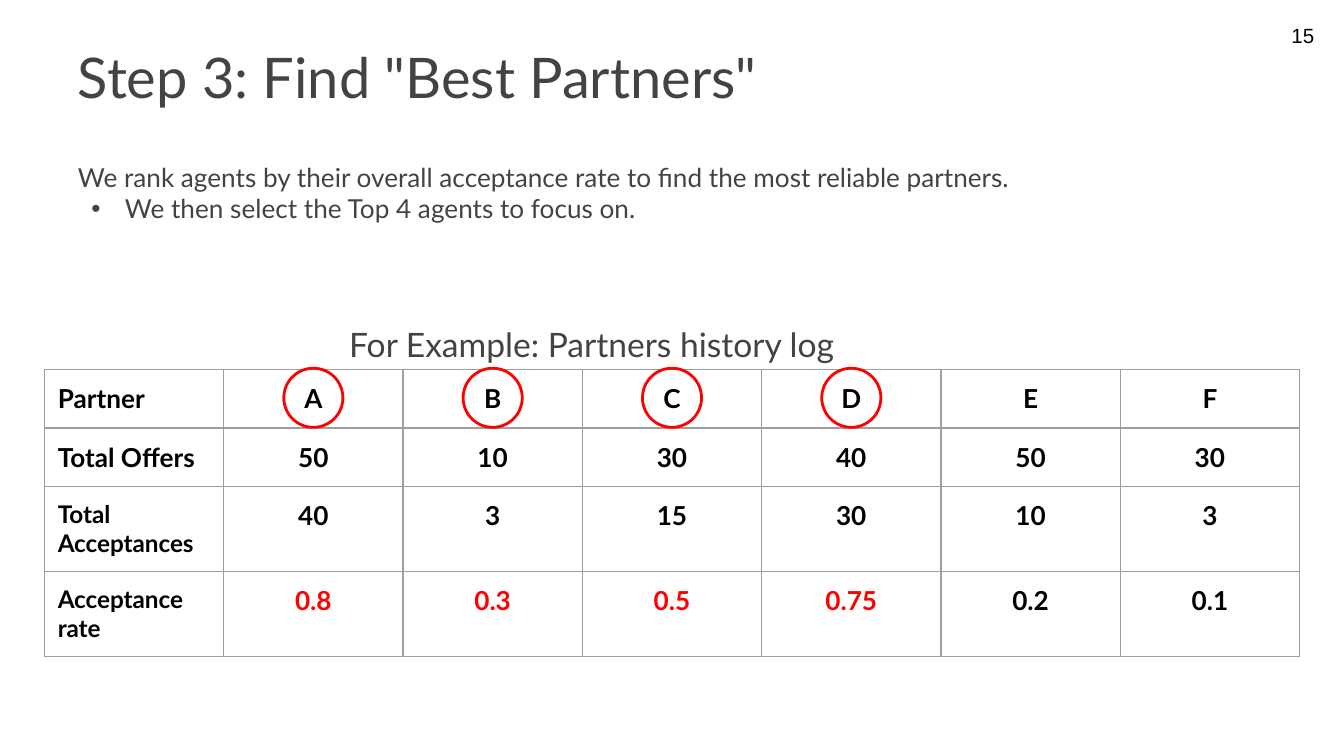
import pptx
import pptx.dml.color
import pptx.enum.shapes
import pptx.enum.text
import pptx.oxml
import pptx.oxml.ns
import pptx.util

Inches, Pt = pptx.util.Inches, pptx.util.Pt
ALIGN = pptx.enum.text.PP_ALIGN
ANCHOR = pptx.enum.text.MSO_ANCHOR

TITLE = 'Step 3: Find "Best Partners"'
INTRO = "We rank agents by their overall acceptance rate to find the most reliable partners."
SELECTION = "We then select the Top 4 agents to focus on."
PAGE = "15"
CAPTION = "For Example: Partners history log"
HISTORY = [
    ("Partner", "A", "B", "C", "D", "E", "F"),
    ("Total Offers", "50", "10", "30", "40", "50", "30"),
    ("Total Acceptances", "40", "3", "15", "30", "10", "3"),
    ("Acceptance rate", "0.8", "0.3", "0.5", "0.75", "0.2", "0.1"),
]
BEST = ("A", "B", "C", "D")

THEME = {
    "grey": "434343", "black": "000000", "red": "FF0000", "border": "9E9E9E",
    "font": "Lato", "page font": "Arial",
    "title": 30, "body": 14, "page": 11, "caption": 18, "cell": 14, "long label": 13,
}
WIDTH = Inches(10)
TABLE_LEFT, TABLE_TOP, COLUMN, ROW = 0.33, 2.75, 9.34 / 7, 0.42
RING = 0.44


def rgb(color):
    return pptx.dml.color.RGBColor.from_string(THEME[color])


def write(paragraph, text, size, color="grey", font="font", bold=False, align=ALIGN.LEFT):
    run = paragraph.add_run()
    run.text = text
    formats = {"name": THEME[font], "size": Pt(THEME[size]), "bold": bold}
    for attribute, value in formats.items():
        setattr(run.font, attribute, value)
    run.font.color.rgb = rgb(color)
    paragraph.alignment = align
    paragraph.space_before = Pt(0)


def add_xml(parent, xml):
    parent.append(pptx.oxml.parse_xml(
        xml.replace(">", f" {pptx.oxml.ns.nsdecls('a')}>", 1)))


def place(box, left, top, width, height, across, down, anchor=ANCHOR.TOP):
    """Position a text shape and set its insets; return its first paragraph."""
    bounds = {"left": left, "top": top, "width": width, "height": height}
    for attribute, value in bounds.items():
        setattr(box, attribute, Inches(value))
    frame = box.text_frame
    formats = {
        "margin_left": Inches(across), "margin_right": Inches(across),
        "margin_top": Inches(down), "margin_bottom": Inches(down),
        "word_wrap": True, "vertical_anchor": anchor,
        "auto_size": pptx.enum.text.MSO_AUTO_SIZE.NONE,
    }
    for attribute, value in formats.items():
        setattr(frame, attribute, value)
    return frame.paragraphs[0]


def add_body(body):
    intro = place(body, 0.51, 1.16, 9, 1.3, 0.07, 0.04)
    selection = body.text_frame.add_paragraph()
    bullet = (f'<a:buClr><a:srgbClr val="{THEME["grey"]}"/></a:buClr>',
              '<a:buFont typeface="Arial"></a:buFont>', '<a:buChar char="•"></a:buChar>')
    for paragraph, text, margin, indent, marks in (
            (intro, INTRO, 0, 0, ("<a:buNone></a:buNone>",)),
            (selection, SELECTION, 0.35, -0.25, bullet)):
        properties = paragraph._p.get_or_add_pPr()
        properties.set("marL", str(Inches(margin)))
        properties.set("indent", str(Inches(indent)))
        for mark in marks:
            add_xml(properties, mark)
        write(paragraph, text, "body")


def format_cell(cell):
    for side in ("left", "right", "top", "bottom"):
        setattr(cell, f"margin_{side}", Inches(0.1))
        tag = f"a:ln{side[0].upper()}"
        add_xml(cell._tc.get_or_add_tcPr(),
                f'<{tag} w="{Pt(0.75)}"><a:solidFill>'
                f'<a:srgbClr val="{THEME["border"]}"/></a:solidFill></{tag}>')
    cell.fill.background()


def add_history(shapes):
    partners = HISTORY[0]
    table = shapes.add_table(
        len(HISTORY), len(partners), Inches(TABLE_LEFT), Inches(TABLE_TOP),
        Inches(COLUMN * len(partners)), Inches(ROW * len(HISTORY))).table
    table.first_row = table.horz_banding = False
    for column in table.columns:
        column.width = Inches(COLUMN)
    for r, values in enumerate(HISTORY):
        table.rows[r].height = Inches(ROW)
        for c, value in enumerate(values):
            cell = table.cell(r, c)
            format_cell(cell)
            is_best_rate = r == len(HISTORY) - 1 and partners[c] in BEST
            write(cell.text_frame.paragraphs[0], value,
                  "long label" if c == 0 and r > 1 else "cell",
                  "red" if is_best_rate else "black", bold=True,
                  align=ALIGN.CENTER if c else ALIGN.LEFT)


def ring_partner(shapes, column):
    center = TABLE_LEFT + COLUMN * (column + 0.5)
    ring = shapes.add_shape(
        pptx.enum.shapes.MSO_SHAPE.OVAL, Inches(center - RING / 2),
        Inches(TABLE_TOP - 0.01), Inches(RING), Inches(RING))
    ring.rotation = 325
    ring.shadow.inherit = False
    ring.fill.background()
    ring.line.color.rgb = rgb("red")
    ring.line.width = Pt(1.5)


def main():
    deck = pptx.Presentation()
    deck.slide_width, deck.slide_height = WIDTH, WIDTH * 9 // 16
    slide = deck.slides.add_slide(deck.slide_layouts[1])
    shapes = slide.shapes

    write(place(shapes.title, 0.51, 0.15, 9, 0.83, 0.07, 0.04, ANCHOR.MIDDLE), TITLE, "title")
    add_body(slide.placeholders[1])

    page = shapes.add_textbox(0, 0, 0, 0)
    write(place(page, 7.52, 0.13, 2.33, 0.39, 0.07, 0.04), PAGE, "page",
          "black", "page font", align=ALIGN.RIGHT)

    add_history(shapes)
    for partner in BEST:
        ring_partner(shapes, HISTORY[0].index(partner))

    caption = shapes.add_textbox(0, 0, 0, 0)
    write(place(caption, 2.5, 2.31, 5.01, 0.5, 0.1, 0.1), CAPTION, "caption")

    deck.save("out.pptx")


if __name__ == "__main__":
    main()
